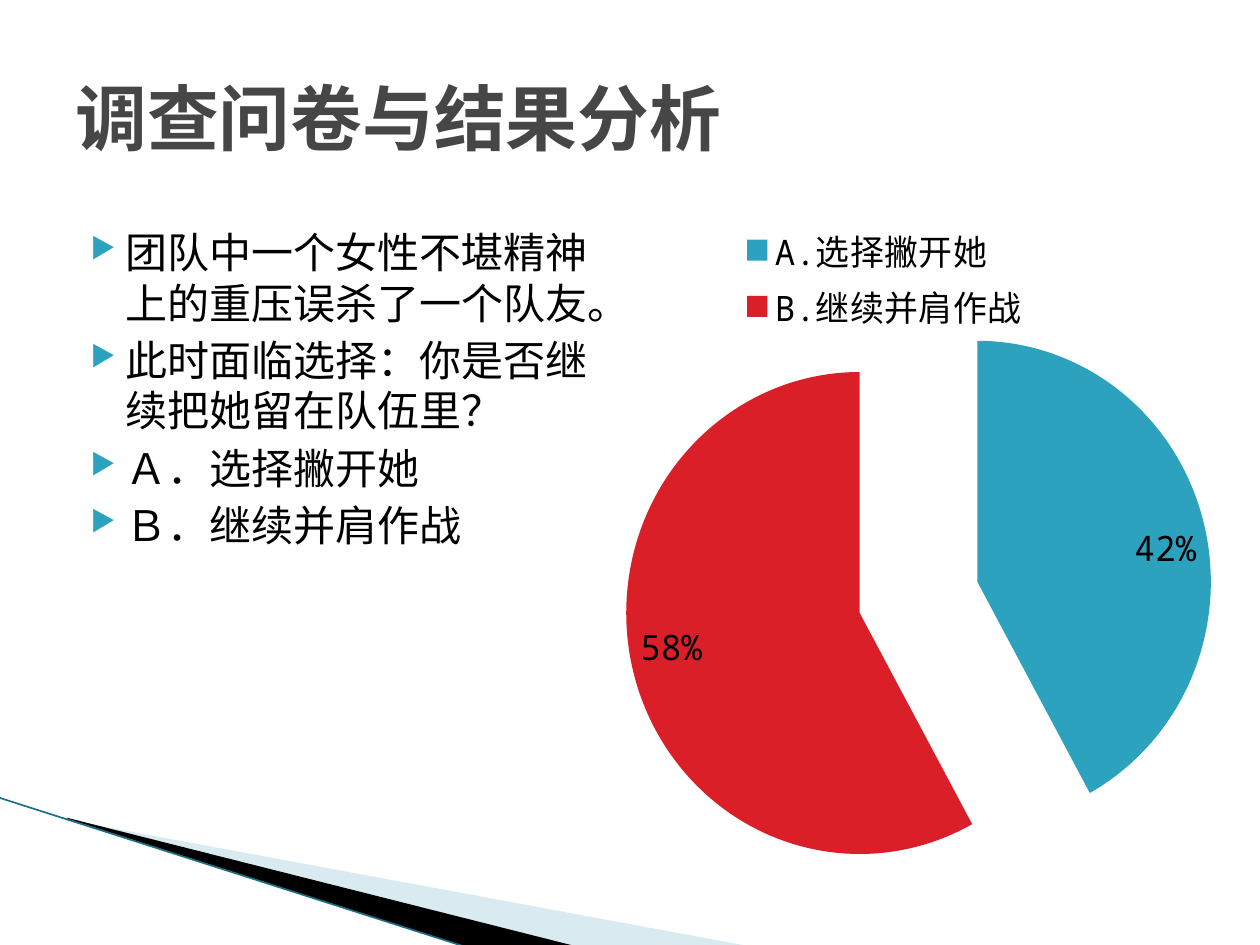
from lxml import etree
from pptx import Presentation
from pptx.chart.data import CategoryChartData
from pptx.dml.color import RGBColor
from pptx.enum.chart import XL_CHART_TYPE, XL_LABEL_POSITION, XL_LEGEND_POSITION
from pptx.enum.shapes import MSO_CONNECTOR
from pptx.enum.text import MSO_ANCHOR
from pptx.oxml.ns import qn
from pptx.util import Pt

PX = 9144  # 100 px to the inch
FONT = "Noto Sans Mono"
TEAL, RED, BLACK = "2DA2BF", "DA1F28", "000000"
PIE = XL_CHART_TYPE.PIE
LEGEND_TOP = XL_LEGEND_POSITION.TOP
INSIDE_END = XL_LABEL_POSITION.INSIDE_END
STRAIGHT = MSO_CONNECTOR.STRAIGHT
TOP, MIDDLE = MSO_ANCHOR.TOP, MSO_ANCHOR.MIDDLE


def emu(box):
    return [length * PX for length in box]


def color(value):
    return RGBColor.from_string(value)


def add_xml(parent, tag, **attributes):
    child = etree.SubElement(parent, qn(tag))
    for name, value in attributes.items():
        child.set(name, str(value))
    return child


def style(font, size, tone=BLACK, bold=False):
    formats = {"name": FONT, "size": Pt(size), "bold": bold}
    for name, value in formats.items():
        setattr(font, name, value)
    font.color.rgb = color(tone)


def add_text(page, box, lines, size, tone=BLACK, bold=False, anchor=TOP, bulleted=False):
    frame = page.shapes.add_textbox(*emu(box)).text_frame
    frame.word_wrap = True
    frame.vertical_anchor = anchor
    for index, line in enumerate(lines):
        para = frame.add_paragraph() if index else frame.paragraphs[0]
        if index:
            para.space_before = Pt(4)
        if bulleted:
            add_bullet(para)
        span = para.add_run()
        span.text = line
        style(span.font, size, tone, bold)
        add_xml(span._r.get_or_add_rPr(), "a:ea", typeface=FONT)


def add_bullet(para):
    props = para._p.get_or_add_pPr()
    props.set("marL", str(40 * PX))
    props.set("indent", str(-28 * PX))
    add_xml(add_xml(props, "a:buClr"), "a:srgbClr", val=TEAL)
    add_xml(props, "a:buSzPct", val=68000)
    add_xml(props, "a:buChar", char="▶")


def add_wedge(page, points, tone, opacity=100):
    builder = page.shapes.build_freeform(*points[0], scale=PX)
    builder.add_line_segments(points[1:], close=True)
    wedge = builder.convert_to_shape()
    wedge.shadow.inherit = False
    wedge.line.fill.background()
    wedge.fill.solid()
    wedge.fill.fore_color.rgb = color(tone)
    if opacity < 100:
        tint = wedge.fill._xPr.find(".//" + qn("a:srgbClr"))
        add_xml(tint, "a:alpha", val=opacity * 1000)


def add_corner(page, box):
    """Sweep of wedges and an edge line across the lower left corner."""
    left, top, width, height = box

    def shift(*points):
        return [(left + x, top + y) for x, y in points]

    add_wedge(page, shift((56, 18), (596, 118), (457, 118), (56, 17)), "A0CBDC", 40)
    add_wedge(page, shift((54, 16), (458, 118), (373, 119), (55, 17)), BLACK)
    edge = page.shapes.add_connector(STRAIGHT, *emu((left, top, left + 372, top + height)))
    edge.line.color.rgb = color("1B6F82")
    edge.line.width = Pt(0.95)
    add_xml(edge._element.spPr, "a:effectLst")


def set_layout(parent, position, **values):
    """Place a chart part by fractions of the chart, after the child at position."""
    for old in parent.findall(qn("c:layout")):
        parent.remove(old)
    layout = etree.Element(qn("c:layout"))
    parent.insert(position, layout)
    manual = add_xml(layout, "c:manualLayout")
    for name, value in values.items():
        add_xml(manual, "c:" + name, val=value)


def add_pie(page, box, shares, tones):
    data = CategoryChartData()
    data.categories = shares.keys()
    data.add_series("Series 1", shares.values())
    chart = page.shapes.add_chart(PIE, *emu(box), data).chart
    chart.has_title = False
    style(chart.font, 18)

    chart.has_legend = True
    legend = chart.legend
    legend.position = LEGEND_TOP
    legend.include_in_layout = False
    style(legend.font, 20)
    set_layout(legend._element, 1, xMode="edge", yMode="edge",
               x=0.18, y=0.02, w=0.53, h=0.18)
    set_layout(chart._chartSpace.chart.plotArea, 0, layoutTarget="inner",
               xMode="edge", yMode="edge", x=0.09, y=0.23, w=0.83, h=0.74)

    plot = chart.plots[0]
    plot.vary_by_categories = True
    series = plot.series[0]
    for index, tone in enumerate(tones):
        fill = series.points[index].format.fill
        fill.solid()
        fill.fore_color.rgb = color(tone)
    for slice_props in series._element.findall(qn("c:dPt")):
        explosion = add_xml(slice_props, "c:explosion", val=26)
        slice_props.find(qn("c:spPr")).addprevious(explosion)

    plot.has_data_labels = True
    labels = plot.data_labels
    formats = {"show_percentage": True, "show_value": False, "number_format": "0%",
               "number_format_is_linked": False, "position": INSIDE_END}
    for name, value in formats.items():
        setattr(labels, name, value)
    style(labels.font, 20)


def main():
    deck = Presentation()
    deck.slide_width, deck.slide_height = emu((1000, 750))
    page = deck.slides.add_slide(deck.slide_layouts[6])
    add_corner(page, (-1, 633, 596, 119))
    add_text(page, (50, 30, 900, 125), ["调查问卷与结果分析"], 41, "464646", True, MIDDLE)
    add_text(page, (50, 175, 442, 495), [
        "团队中一个女性不堪精神上的重压误杀了一个队友。",
        "此时面临选择：你是否继续把她留在队伍里？",
        "Ａ．选择撇开她",
        "Ｂ．继续并肩作战",
    ], 24, bulleted=True)
    add_pie(page, (497, 164, 464, 517), {"A.选择撇开她": 42, "B.继续并肩作战": 58}, [TEAL, RED])
    deck.save("out.pptx")


if __name__ == "__main__":
    main()
